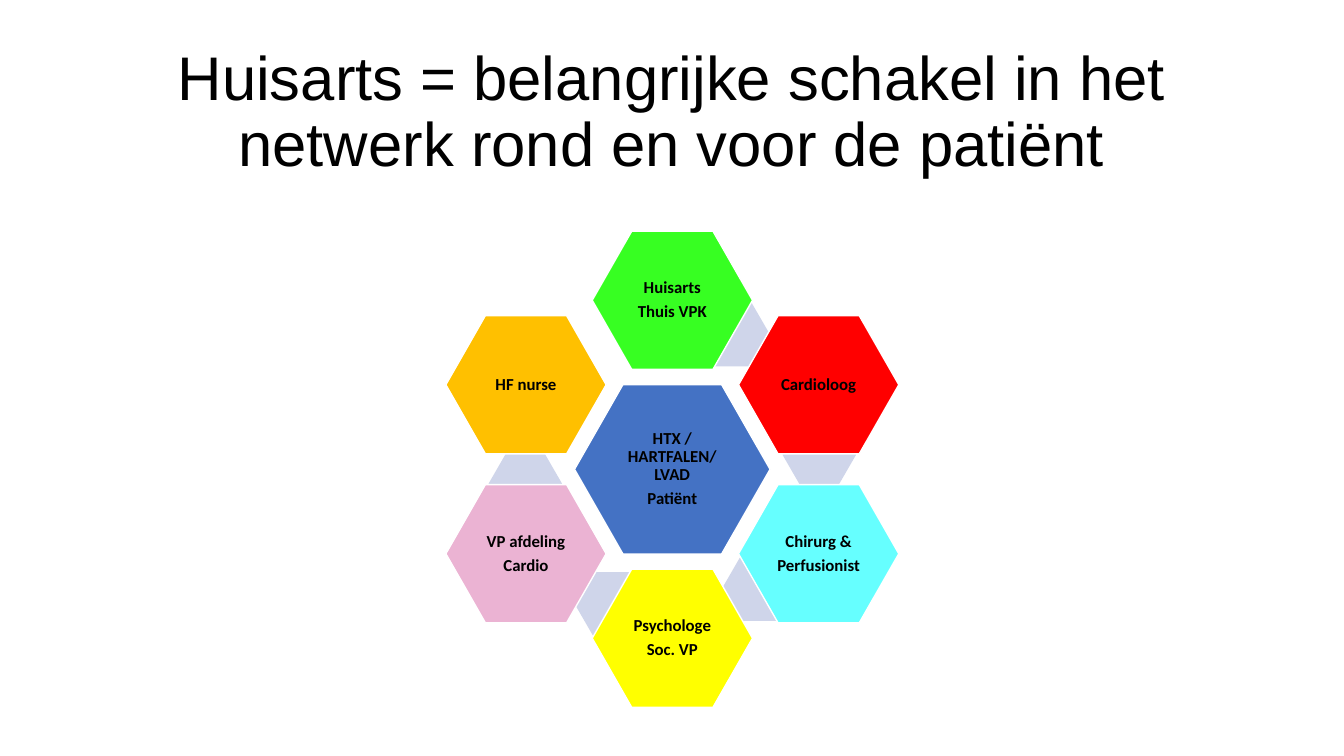
"""Build a slide with a ring of care roles around the patient."""
from math import cos, radians, sin

from pptx import Presentation
from pptx.dml.color import RGBColor
from pptx.enum.shapes import MSO_SHAPE
from pptx.enum.text import MSO_ANCHOR, PP_ALIGN
from pptx.util import Pt

HEX = MSO_SHAPE.HEXAGON
MIDDLE = MSO_ANCHOR.MIDDLE
CENTER = PP_ALIGN.CENTER

TITLE = "Huisarts = belangrijke schakel in het netwerk rond en voor de patiënt"
HUB = (["HTX / HARTFALEN/ LVAD", "Patiënt"], "4472C4")
ROLES = [
    (["Huisarts", "Thuis VPK"], "37FF22"),
    (["Cardioloog"], "FF0000"),
    (["Chirurg &", "Perfusionist"], "66FFFF"),
    (["Psychologe", "Soc. VP"], "FFFF00"),
    (["VP afdeling", "Cardio"], "EBB3D3"),
    (["HF nurse"], "FFC000"),
]
LINK = "CFD5EA"

MID = (480.25, 335.2)
HUB_SIZE = (139.7, 121)
ROLE_SIZE = (114.5, 98.8)
LINK_SIZE = (52.5, 45.3)
ROLE_R, LINK_R = 120.7, 105.5
STEP, TURN = 60, 24.4

LABEL = {"size": Pt(12), "name": "Calibri", "bold": True}
HEAD = {"size": Pt(44), "name": "Arial", "bold": False}
TIGHT = {"alignment": CENTER, "line_spacing": 0.9, "space_after": Pt(4.2)}
PLAIN = {"alignment": CENTER, "line_spacing": 0.9}
INSET = {f"margin_{side}": Pt(1.2) for side in ("left", "top", "right", "bottom")}


def color(code):
    return RGBColor.from_string(code)


def apply(item, values):
    for key, value in values.items():
        setattr(item, key, value)


def write(frame, lines, para, font):
    apply(frame, {"word_wrap": True, "vertical_anchor": MIDDLE})
    for i, line in enumerate(lines):
        p = frame.add_paragraph() if i else frame.paragraphs[0]
        apply(p, para)
        run = p.add_run()
        run.text = line
        apply(run.font, font)
        run.font.color.rgb = color("000000")


def orbit(radius, angle):
    turn = radians(angle)
    return MID[0] + radius * sin(turn), MID[1] - radius * cos(turn)


def hexagon(slide, spot, size, fill, adj):
    (x, y), (w, h) = spot, size
    shape = slide.shapes.add_shape(HEX, Pt(x - w / 2), Pt(y - h / 2), Pt(w), Pt(h))
    shape.shadow.inherit = False
    shape.adjustments[0] = adj
    shape.fill.solid()
    shape.fill.fore_color.rgb = color(fill)
    shape.line.fill.background()
    return shape


def cell(slide, spot, size, role):
    lines, fill = role
    shape = hexagon(slide, spot, size, fill, 0.286)
    shape.line.color.rgb = color("FFFFFF")
    shape.line.width = Pt(1)
    apply(shape.text_frame, INSET)
    write(shape.text_frame, lines, TIGHT, LABEL)


def main():
    deck = Presentation()
    apply(deck, {"slide_width": Pt(960), "slide_height": Pt(540)})
    slide = deck.slides.add_slide(deck.slide_layouts[6])
    title = slide.shapes.add_textbox(Pt(66), Pt(28.75), Pt(828), Pt(104.4))
    write(title.text_frame, [TITLE], PLAIN, HEAD)
    cell(slide, MID, HUB_SIZE, HUB)
    for i, role in enumerate(ROLES):
        angle = i * STEP
        if i < len(ROLES) - 1:
            hexagon(slide, orbit(LINK_R, angle + TURN), LINK_SIZE, LINK, 0.289)
        cell(slide, orbit(ROLE_R, angle), ROLE_SIZE, role)
    deck.save("out.pptx")


if __name__ == "__main__":
    main()
